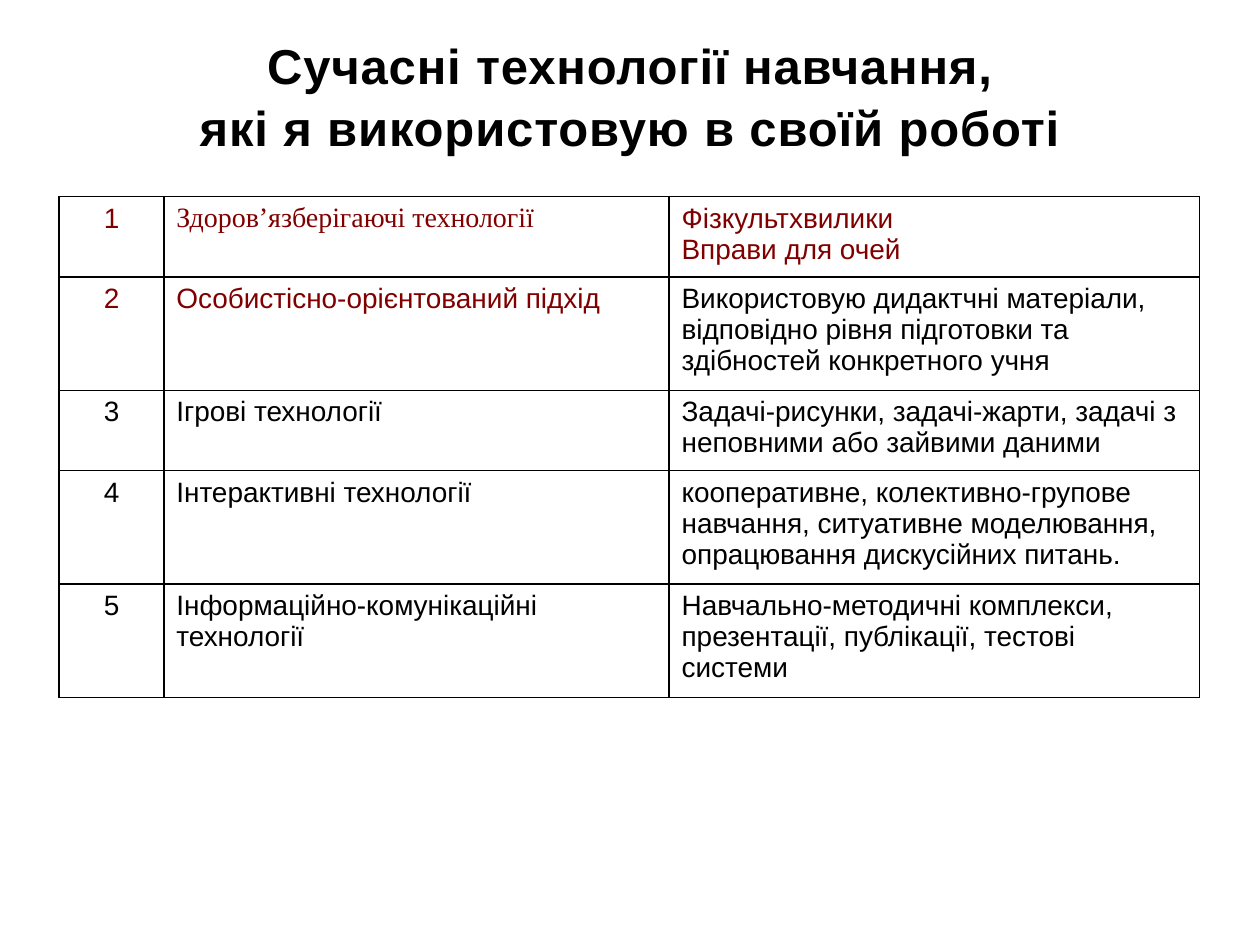
import dataclasses

import lxml.etree
import pptx
import pptx.dml.color
import pptx.enum.text
import pptx.oxml.ns
import pptx.util


@dataclasses.dataclass(frozen=True)
class Theme:
    """Colours, fonts and type sizes of the deck."""
    ink: str = "000000"
    accent: str = "800000"
    paper: str = "FFFFFF"
    sans: str = "Arial"
    serif: str = "Times New Roman"
    title_size: int = 28
    cell_size: int = 16
    rule_width: int = 1


class Deck:
    """Holds the theme and the current slide."""

    def __init__(self, theme, width=10, height=7.5):
        """Open a presentation with one title-only slide."""
        self.theme = theme
        self.presentation = pptx.Presentation()
        self.presentation.slide_width = pptx.util.Inches(width)
        self.presentation.slide_height = pptx.util.Inches(height)
        self.slide = self.presentation.slides.add_slide(self.presentation.slide_layouts[5])
        background = self.slide.background.fill
        background.solid()
        background.fore_color.rgb = pptx.dml.color.RGBColor.from_string(theme.paper)

    def across(self, share):
        """Turn a share of the slide width into a length."""
        return round(self.presentation.slide_width * share)

    def down(self, share):
        """Turn a share of the slide height into a length."""
        return round(self.presentation.slide_height * share)

    def format_text(self, frame, size, color, font, bold=False, centered=False):
        """Give every paragraph and run of a frame one look."""
        align = pptx.enum.text.PP_ALIGN
        for paragraph in frame.paragraphs:
            paragraph.alignment = align.CENTER if centered else align.LEFT
            for run in paragraph.runs:
                run.font.size = pptx.util.Pt(size)
                run.font.name = font
                run.font.bold = bold
                run.font.color.rgb = pptx.dml.color.RGBColor.from_string(color)

    def title(self, lines, left, top, width, height, tracking, leading):
        """Move, fill and format the title placeholder."""
        heading = self.slide.shapes.title
        heading.left, heading.top = self.across(left), self.down(top)
        heading.width, heading.height = self.across(width), self.down(height)
        frame = heading.text_frame
        frame.text = "\n".join(lines)
        frame.word_wrap = False
        frame.auto_size = pptx.enum.text.MSO_AUTO_SIZE.NONE
        frame.vertical_anchor = pptx.enum.text.MSO_ANCHOR.TOP
        self.format_text(frame, self.theme.title_size, self.theme.ink, self.theme.sans, True, True)
        for paragraph in frame.paragraphs:
            paragraph.line_spacing = leading
            for run in paragraph.runs:
                run.font._element.set("spc", str(round(tracking * 100)))

    def border(self, cell):
        """Rule all four sides of a cell."""
        qn = pptx.oxml.ns.qn
        properties = cell._tc.get_or_add_tcPr()
        for position, side in enumerate(("lnL", "lnR", "lnT", "lnB")):
            line = lxml.etree.Element(qn(f"a:{side}"), w=str(pptx.util.Pt(self.theme.rule_width)))
            fill = lxml.etree.SubElement(line, qn("a:solidFill"))
            lxml.etree.SubElement(fill, qn("a:srgbClr"), val=self.theme.ink)
            properties.insert(position, line)

    def table(self, rows, left, top, columns, heights):
        """Draw a ruled table from rows of (text, colour, font) cells."""
        grid = self.slide.shapes.add_table(
            len(rows), len(columns), self.across(left), self.down(top),
            self.across(sum(columns)), self.down(sum(heights))).table
        grid.first_row = grid.horz_banding = False
        for column, share in zip(grid.columns, columns):
            column.width = self.across(share)
        for row, share, entries in zip(grid.rows, heights, rows):
            row.height = self.down(share)
            for index, (cell, (text, color, font)) in enumerate(zip(row.cells, entries)):
                cell.text_frame.text = text
                cell.fill.background()
                self.border(cell)
                self.format_text(cell.text_frame, self.theme.cell_size, color, font,
                                 centered=index == 0)


def main():
    """Build the slide on learning technologies."""
    theme = Theme()
    deck = Deck(theme)
    deck.title(["Сучасні технології навчання,", "які я використовую в своїй роботі"],
               left=0.144, top=0.028, width=0.712, height=0.14, tracking=0.5, leading=1.05)

    plain, accent = (theme.ink, theme.sans), (theme.accent, theme.sans)
    technologies = [
        ("Здоров’язберігаючі технології", (theme.accent, theme.serif),
         "Фізкультхвилики\nВправи для очей", accent),
        ("Особистісно-орієнтований підхід", accent,
         "Використовую дидактчні матеріали, відповідно рівня підготовки "
         "та здібностей конкретного учня", plain),
        ("Ігрові технології", plain,
         "Задачі-рисунки, задачі-жарти, задачі з неповними або зайвими даними", plain),
        ("Інтерактивні технології", plain,
         "кооперативне, колективно-групове навчання, ситуативне моделювання, "
         "опрацювання дискусійних питань.", plain),
        ("Інформаційно-комунікаційні технології", plain,
         "Навчально-методичні комплекси, презентації, публікації, тестові системи", plain),
    ]
    rows = [
        [(str(number), accent[0] if name_look[0] == theme.accent else theme.ink, theme.sans),
         (name, *name_look), (practice, *practice_look)]
        for number, (name, name_look, practice, practice_look) in enumerate(technologies, 1)
    ]
    two_lines, three_lines = 0.085, 0.12
    deck.table(rows, left=0.047, top=0.208, columns=[0.083, 0.401, 0.421],
               heights=[two_lines, three_lines, two_lines, three_lines, three_lines])
    deck.presentation.save("out.pptx")


if __name__ == "__main__":
    main()
